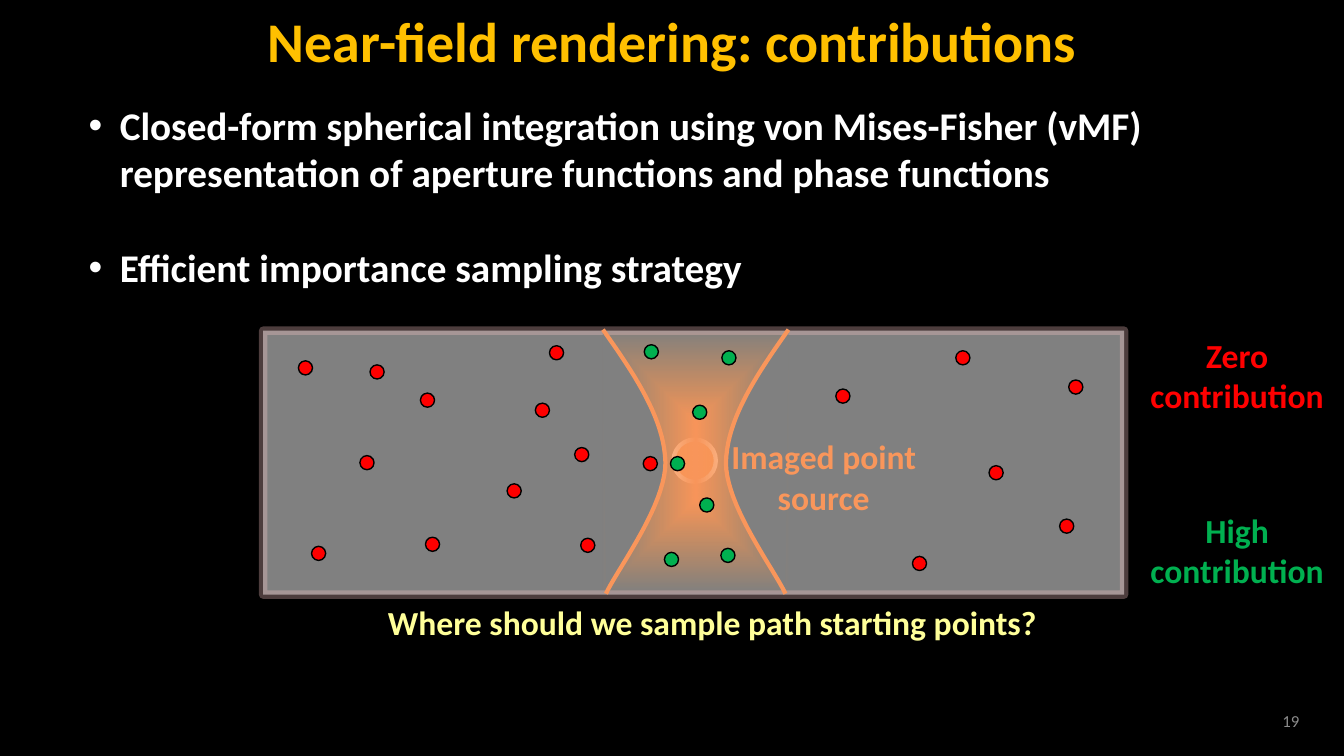
from lxml.etree import SubElement
from pptx import Presentation
from pptx.dml.color import RGBColor
from pptx.enum.shapes import MSO_SHAPE
from pptx.enum.text import MSO_ANCHOR, PP_ALIGN
from pptx.oxml.ns import qn
from pptx.util import Inches, Pt

ORANGE, RED, GREEN, GRAY = "F9965B", "FF0000", "00B050", "808080"
RED_POINTS = [
    (4.17, 3.9), (3.67, 3.62), (3.57, 4.52), (4.22, 5.33), (6.38, 4.53),
    (5.45, 3.43), (9.05, 5.52), (9.48, 3.48), (8.29, 3.86), (9.81, 4.62),
    (10.6, 3.77), (10.51, 5.15), (5.76, 5.34), (3.09, 5.42), (2.96, 3.58),
    (5.03, 4.8), (5.31, 4), (5.7, 4.44),
]
GREEN_POINTS = [
    (6.65, 4.53), (6.39, 3.42), (7.15, 5.44), (6.59, 5.48),
    (6.94, 4.94), (6.87, 4.02), (7.16, 3.48),
]
LEFT_EDGE = [
    [(5.98, 3.27), (6.29, 3.71), (6.59, 4.15), (6.6, 4.59)],
    [(6.6, 4.59), (6.6, 5.02), (6.12, 5.65), (6.01, 5.89)],
]
BEAM_CENTER = 6.9


def color(value):
    """Turn a hex string into a colour."""
    return RGBColor.from_string(value)


def add_alpha(solid, percent):
    """Give a colour element an opacity in percent."""
    SubElement(solid, qn("a:alpha"), val=str(percent * 1000))


def bezier(control, steps=20):
    """Return points along a cubic curve, without its start."""
    points = []
    for step in range(1, steps + 1):
        t = step / steps
        weights = ((1 - t) ** 3, 3 * t * (1 - t) ** 2, 3 * t * t * (1 - t), t ** 3)
        points.append(tuple(sum(w * p[axis] for w, p in zip(weights, control))
                            for axis in (0, 1)))
    return points


class SlideBuilder:
    """Hold the text style and the current page."""

    def __init__(self, page, font="Calibri"):
        """Set the page and its black background."""
        self.page, self.font = page, font
        page.background.fill.solid()
        page.background.fill.fore_color.rgb = color("000000")

    def add_span(self, para, text, size, hue, bold=True):
        """Add one styled run to a paragraph."""
        span = para.add_run()
        span.text = text
        span.font.name, span.font.size, span.font.bold = self.font, Pt(size), bold
        span.font.color.rgb = color(hue)

    def title(self, text):
        """Fill the title placeholder."""
        box = self.page.shapes.title
        box.left, box.top, box.width, box.height = 0, 0, Inches(13.33), Inches(0.8)
        box.fill.solid()
        box.fill.fore_color.rgb = color("000000")
        box.text_frame.vertical_anchor = MSO_ANCHOR.MIDDLE
        para = box.text_frame.paragraphs[0]
        para.alignment = PP_ALIGN.CENTER
        self.add_span(para, text, 40, "FFC000")

    def text_frame(self, at):
        """Add a wrapping text box and return its frame."""
        frame = self.page.shapes.add_textbox(*map(Inches, at)).text_frame
        frame.word_wrap = True
        return frame

    def label(self, at, text, hue):
        """Add a centred bold label."""
        para = self.text_frame(at).paragraphs[0]
        para.alignment = PP_ALIGN.CENTER
        self.add_span(para, text, 24, hue)

    def bullets(self, at, items, gap):
        """Add a bulleted list with a gap between items."""
        frame = self.text_frame(at)
        for index, item in enumerate(items):
            para = frame.add_paragraph() if index else frame.paragraphs[0]
            if index:
                para.space_before = Pt(gap)
            properties = para._p.get_or_add_pPr()
            properties.set("marL", str(Inches(0.31)))
            properties.set("indent", str(Inches(-0.31)))
            SubElement(properties, qn("a:buFont"), typeface="Arial")
            SubElement(properties, qn("a:buChar"), char="•")
            self.add_span(para, item, 28, "FFFFFF")

    def page_number(self, at, text):
        """Add the small page number."""
        frame = self.text_frame(at)
        frame.vertical_anchor = MSO_ANCHOR.MIDDLE
        self.add_span(frame.paragraphs[0], text, 12, "8C8C8C", bold=False)

    def paint(self, shape, fill, line, width):
        """Set a plain fill and outline."""
        shape.shadow.inherit = False
        shape.fill.solid()
        shape.fill.fore_color.rgb = color(fill)
        shape.line.color.rgb = color(line)
        shape.line.width = Pt(width)
        return shape

    def shape(self, kind, at, fill, line, width):
        """Add a painted preset shape."""
        return self.paint(self.page.shapes.add_shape(kind, *map(Inches, at)),
                          fill, line, width)

    def dots(self, points, fill):
        """Add a scatter of sample points."""
        for left, top in points:
            self.shape(MSO_SHAPE.OVAL, (left, top, 0.14, 0.14), fill, "000000", 1)

    def glow(self, at, inner, outer):
        """Add a rectangle that fades from its centre outwards."""
        glow = self.page.shapes.add_shape(MSO_SHAPE.RECTANGLE, *map(Inches, at))
        glow.shadow.inherit = False
        glow.line.fill.background()
        glow.fill.gradient()
        for stop, hue, position in zip(glow.fill.gradient_stops, (inner, outer), (0, 1)):
            stop.color.rgb = color(hue)
            stop.position = position
        gradient = glow._element.spPr.find(qn("a:gradFill"))
        add_alpha(gradient.findall(".//" + qn("a:srgbClr"))[1], 0)
        gradient.remove(gradient.find(qn("a:lin")))
        route = SubElement(gradient, qn("a:path"))
        route.set("path", "rect")
        SubElement(route, qn("a:fillToRect"), l="50000", t="50000", r="50000", b="50000")

    def curve(self, segments, fill, line, width):
        """Add an open outline made of cubic curves."""
        start = segments[0][0]
        builder = self.page.shapes.build_freeform(
            Inches(start[0]), Inches(start[1]))
        points = [point for segment in segments for point in bezier(segment)]
        builder.add_line_segments([(Inches(x), Inches(y)) for x, y in points], close=False)
        self.paint(builder.convert_to_shape(), fill, line, width)


def main():
    """Build the slide and save it."""
    deck = Presentation()
    deck.slide_width, deck.slide_height = Inches(13.33), Inches(7.5)
    slide = SlideBuilder(deck.slides.add_slide(deck.slide_layouts[5]))
    slide.title("Near-field rendering: contributions")
    slide.bullets((0.78, 0.96, 11.49, 1.99), [
        "Closed-form spherical integration using von Mises-Fisher (vMF) "
        "representation of aperture functions and phase functions",
        "Efficient importance sampling strategy",
    ], gap=34)
    slide.label((3.14, 5.92, 7.85, 0.5),
                "Where should we sample path starting points?", "FFFF99")

    medium = slide.shape(MSO_SHAPE.RECTANGLE, (2.61, 3.28, 8.54, 2.62), GRAY, "FFCCCC", 6)
    add_alpha(medium.line._ln.find(".//" + qn("a:srgbClr")), 30)
    slide.shape(MSO_SHAPE.OVAL, (6.68, 4.36, 0.42, 0.42), ORANGE, "FFFFFF", 3)
    slide.glow((5.98, 3.27, 1.84, 2.61), ORANGE, "F79646")
    right_edge = [[(2 * BEAM_CENTER - x, y) for x, y in segment] for segment in LEFT_EDGE]
    for edge in (LEFT_EDGE, right_edge):
        slide.curve(edge, GRAY, ORANGE, 3)
    slide.label((6.75, 4.28, 2.84, 0.91), "Imaged point source", ORANGE)
    slide.dots(RED_POINTS, RED)
    slide.dots(GREEN_POINTS, GREEN)

    slide.label((11.08, 3.27, 2.38, 0.91), "Zero contribution", RED)
    slide.label((11.08, 5.01, 2.38, 0.91), "High contribution", GREEN)
    slide.page_number((12.62, 6.95, 0.72, 0.4), "19")
    deck.save("out.pptx")


if __name__ == "__main__":
    main()
